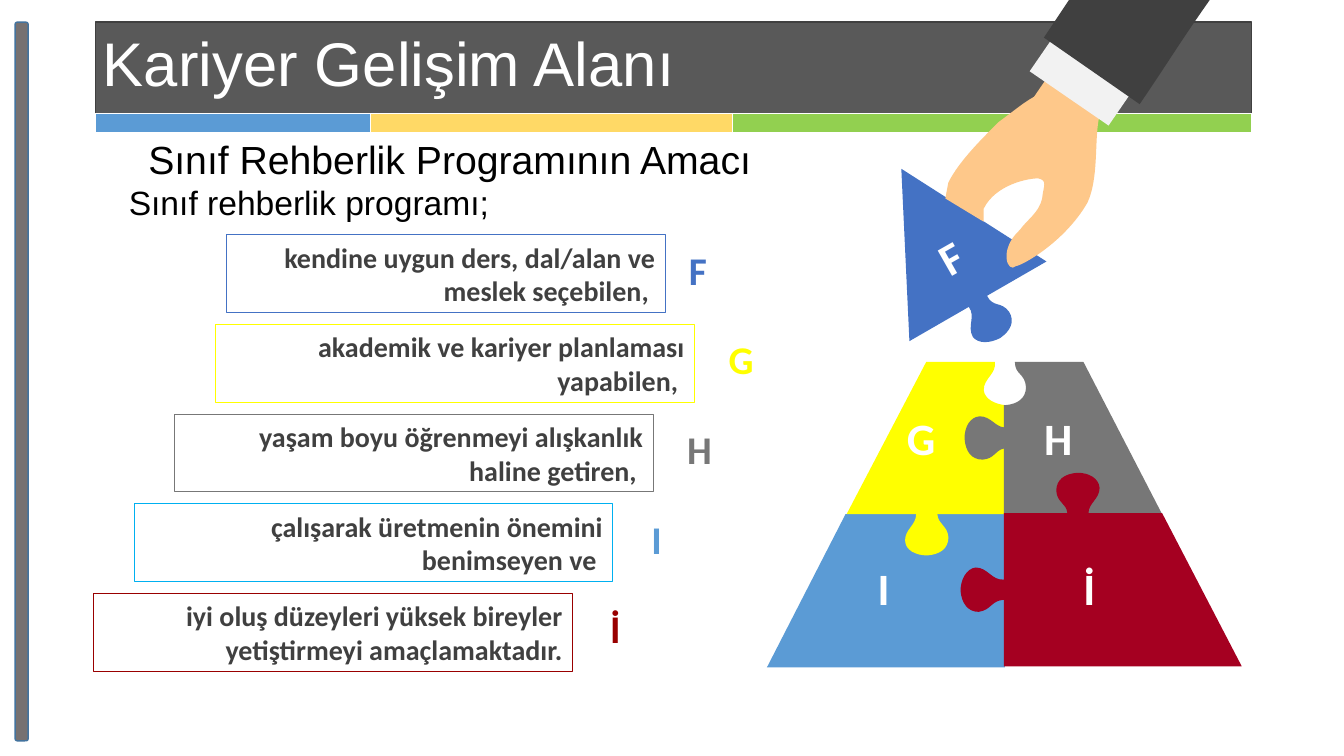
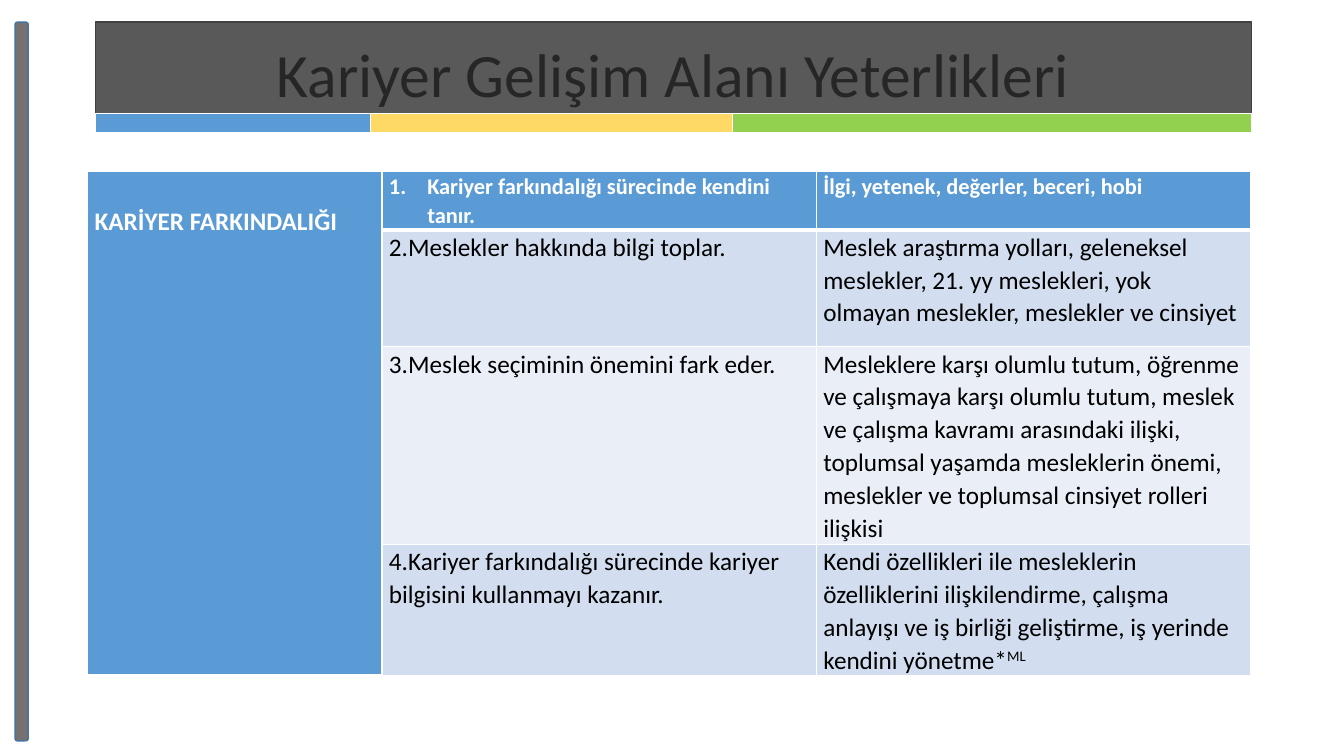
import dataclasses
import math
import typing

import lxml.etree
import pptx
import pptx.dml.color
import pptx.enum.shapes
import pptx.enum.text
import pptx.oxml.ns
import pptx.util

Align = pptx.enum.text.PP_ALIGN
Anchor = pptx.enum.text.MSO_ANCHOR
Preset = pptx.enum.shapes.MSO_SHAPE
Box = tuple[float, float, float, float]

WHITE, BLACK, DARK = "FFFFFF", "000000", "404040"
BLUE, YELLOW, GREY, SKY = "4472C4", "FFFF00", "777777", "5B9BD5"
RED, CRIMSON = "990000", "A50021"
STRIPES = [(2.73, SKY), (3.59, "FFD966"), (5.15, "92D050")]


@dataclasses.dataclass(frozen=True)
class Statement:
    letter: str
    text: str
    color: str
    border: str
    left: float
    width: float
    letter_left: float


@dataclasses.dataclass(frozen=True)
class Piece:
    """An outline as it shows: pairs are line ends, sextuples are cubic Bézier curves."""
    color: str
    outline: list[tuple[float, ...]]
    rotation: float = 0
    pivot: tuple[float, float] = (0, 0)


@dataclasses.dataclass(frozen=True)
class PieceLetter:
    letter: str
    box: Box
    rotation: float = 0


@dataclasses.dataclass(frozen=True)
class Competence:
    skill: str
    content: str
    fill: str
    height: float
    superscript: str = ""


STATEMENTS = [
    Statement("F", "kendine uygun ders, dal/alan ve meslek seçebilen, ", BLUE, BLUE, 2.25, 4.35, 6.72),
    Statement("G", "akademik ve kariyer planlaması yapabilen, ", YELLOW, YELLOW, 2.14, 4.75, 7.13),
    Statement("H", "yaşam boyu öğrenmeyi alışkanlık haline getiren, ", GREY, GREY, 1.73, 4.75, 6.72),
    Statement("I", "çalışarak üretmenin önemini benimseyen ve ", SKY, "00B0F0", 1.33, 4.75, 6.31),
    Statement("İ", "iyi oluş düzeyleri yüksek bireyler yetiştirmeyi amaçlamaktadır.", RED, RED, 0.93, 4.75, 5.9),
]

PUZZLE = [
    Piece(SKY, [(8.39, 5.1), (9.97, 5.1), (9.97, 6.62), (7.61, 6.62)]),
    Piece(BLUE, [
        (8.94, 1.67), (10.38, 2.59), (9.79, 2.93),
        (9.85, 3.05, 9.93, 2.98, 10.01, 3.09), (10.07, 3.19, 10.02, 3.28, 9.92, 3.35),
        (9.82, 3.4, 9.71, 3.41, 9.65, 3.34), (9.59, 3.23, 9.68, 3.14, 9.61, 3.04),
        (9.02, 3.38)], 330, (9.42, 2.52)),
    Piece(YELLOW, [
        (9.19, 3.59), (9.87, 3.59), (9.89, 3.71, 9.76, 3.75, 9.76, 3.87),
        (9.77, 3.96, 9.87, 4.01, 9.98, 4.02), (9.98, 5.1), (9.3, 5.1),
        (9.31, 5.21, 9.4, 5.21, 9.41, 5.33), (9.41, 5.44, 9.33, 5.5, 9.2, 5.51),
        (9.09, 5.51, 8.98, 5.46, 8.98, 5.36), (8.98, 5.25, 9.09, 5.21, 9.09, 5.1),
        (8.4, 5.1)]),
    Piece(GREY, [
        (10.07, 3.59), (10.75, 3.59), (11.53, 5.1), (9.96, 5.1), (9.96, 4.45),
        (9.87, 4.47, 9.87, 4.55, 9.75, 4.56), (9.64, 4.56, 9.58, 4.48, 9.57, 4.35),
        (9.57, 4.24, 9.62, 4.14, 9.72, 4.13), (9.83, 4.13, 9.87, 4.23, 9.96, 4.24),
        (9.96, 4.02), (9.97, 4.02), (10.1, 4.01, 10.18, 3.95, 10.18, 3.84),
        (10.17, 3.7, 10.07, 3.72, 10.07, 3.59)]),
    Piece(CRIMSON, [
        (10.69, 4.69), (10.8, 4.69, 10.9, 4.74, 10.91, 4.84),
        (10.91, 4.95, 10.8, 4.99, 10.8, 5.09), (11.53, 5.09), (12.32, 6.61),
        (9.96, 6.61), (9.96, 5.95), (9.83, 5.96, 9.84, 6.05, 9.71, 6.07),
        (9.6, 6.07, 9.54, 5.98, 9.53, 5.86), (9.53, 5.75, 9.59, 5.64, 9.68, 5.63),
        (9.8, 5.63, 9.84, 5.76, 9.96, 5.75), (9.96, 5.09), (10.59, 5.09),
        (10.58, 4.99, 10.49, 4.99, 10.48, 4.87), (10.48, 4.76, 10.56, 4.7, 10.69, 4.69)]),
]

PIECE_LETTERS = [
    PieceLetter("F", (9.23, 2.23, 0.41, 0.64), 330.4),
    PieceLetter("G", (8.9, 4.03, 0.49, 0.64)),
    PieceLetter("H", (10.26, 4.03, 0.49, 0.64)),
    PieceLetter("I", (8.61, 5.51, 0.32, 0.64)),
    PieceLetter("İ", (10.65, 5.51, 0.32, 0.64)),
]

HAND = Piece("FEC88A", [
    (10.61, 0.45), (11.29, 0.7), (11.07, 0.91, 10.96, 0.97, 10.9, 1.19),
    (10.86, 1.42, 10.9, 1.77, 10.79, 2.01), (10.56, 2.41, 10.13, 2.64, 10.08, 2.64),
    (10, 2.72, 9.9, 2.48, 10.12, 2.28), (10.19, 2.18, 10.31, 2.11, 10.34, 1.97),
    (10.35, 1.85, 10.4, 1.79, 10.3, 1.77), (10.2, 1.77, 9.88, 1.83, 9.76, 2.07),
    (9.76, 2.11, 9.76, 2.16, 9.76, 2.2), (9.38, 1.97),
    (9.39, 1.91, 9.4, 1.86, 9.41, 1.81), (9.52, 1.59, 9.77, 1.35, 9.91, 1.21),
    (10.1, 1.07, 10.14, 1.03, 10.26, 0.96)])
SLEEVE = Piece(DARK, [
    (10.62, -0.02), (12.01, -0.01), (11.7, 0.43, 11.61, 0.59, 11.31, 1.03),
    (10.36, 0.37)], 34.5, (11.19, 0.19))

COMPETENCES = [
    Competence("Kariyer farkındalığı sürecinde kendini tanır.",
               "İlgi, yetenek, değerler, beceri, hobi", SKY, 0.58),
    Competence("2.Meslekler hakkında bilgi toplar.",
               "Meslek araştırma yolları, geleneksel meslekler, 21. yy meslekleri, "
               "yok olmayan meslekler, meslekler ve cinsiyet", "D2DEEF", 1.16),
    Competence("3.Meslek seçiminin önemini fark eder.",
               "Mesleklere karşı olumlu tutum, öğrenme ve çalışmaya karşı olumlu tutum, "
               "meslek ve çalışma kavramı arasındaki ilişki, toplumsal yaşamda mesleklerin "
               "önemi, meslekler ve toplumsal cinsiyet rolleri ilişkisi", "EAEFF7", 1.74),
    Competence("4.Kariyer farkındalığı sürecinde kariyer bilgisini kullanmayı kazanır.",
               "Kendi özellikleri ile mesleklerin özelliklerini ilişkilendirme, çalışma "
               "anlayışı ve iş birliği geliştirme, iş yerinde kendini yönetme*",
               "D2DEEF", 1.16, "ML"),
]


def length(inches: float) -> pptx.util.Length:
    return pptx.util.Cm(inches * 2.54)


def place(box: Box) -> list[pptx.util.Length]:
    return [length(value) for value in box]


def rgb(color: str) -> pptx.dml.color.RGBColor:
    return pptx.dml.color.RGBColor.from_string(color)


def child(parent: typing.Any, tag: str, **attributes: str) -> typing.Any:
    element = lxml.etree.SubElement(parent, pptx.oxml.ns.qn(tag))
    for key, value in attributes.items():
        element.set(key, value)
    return element


def write(frame: typing.Any, text: str, *, size: float, color: str, font: str = "Calibri",
          bold: bool = False, align: Align = Align.LEFT, spacing: float = 1.0,
          superscript: str = "", number_indent: float = 0) -> None:
    """Fill the frame's first paragraph, or add one when it already has text."""
    paragraph = frame.add_paragraph() if frame.text else frame.paragraphs[0]
    paragraph.alignment = align
    paragraph.line_spacing = spacing
    paragraph.space_before = pptx.util.Pt(0)
    if number_indent:
        properties = paragraph._p.get_or_add_pPr()
        properties.set("marL", str(length(number_indent)))
        properties.set("indent", str(-length(number_indent)))
        child(properties, "a:buAutoNum", type="arabicPeriod")
    for part in filter(None, (text, superscript)):
        run = paragraph.add_run()
        run.text = part
        run.font.name = font
        run.font.size = pptx.util.Pt(size)
        run.font.bold = bold
        run.font.color.rgb = rgb(color)
        if part == superscript:
            run.font._element.set("baseline", "30000")


def paint(shape: typing.Any, fill: str = "", line: str = "", width: float = 1) -> None:
    shape.shadow.inherit = False
    if fill:
        shape.fill.solid()
        shape.fill.fore_color.rgb = rgb(fill)
    else:
        shape.fill.background()
    if line:
        shape.line.color.rgb = rgb(line)
        shape.line.width = pptx.util.Pt(width)
    else:
        shape.line.fill.background()


def add_preset(slide: typing.Any, preset: Preset, box: Box, **style: typing.Any) -> typing.Any:
    shape = slide.shapes.add_shape(preset, *place(box))
    paint(shape, **style)
    return shape


def add_label(slide: typing.Any, box: Box, text: str, wrap: bool = True,
              **style: typing.Any) -> typing.Any:
    label = slide.shapes.add_textbox(*place(box))
    label.text_frame.word_wrap = wrap
    write(label.text_frame, text, **style)
    return label


def add_piece(slide: typing.Any, piece: Piece) -> None:
    """Draw every point as a line end, then join each curve's three points into one curve."""
    turn = math.radians(-piece.rotation)
    px, py = piece.pivot
    points = []
    for segment in piece.outline:
        for x, y in zip(segment[::2], segment[1::2]):
            dx, dy = x - px, y - py
            points.append((length(px + dx * math.cos(turn) - dy * math.sin(turn)),
                           length(py + dx * math.sin(turn) + dy * math.cos(turn))))
    builder = slide.shapes.build_freeform(*points[0], scale=1.0)
    builder.add_line_segments(points[1:], close=True)
    shape = builder.convert_to_shape()
    ends = iter(list(shape.element.iter(pptx.oxml.ns.qn("a:lnTo"))))
    for segment in piece.outline[1:]:
        end = next(ends)
        if len(segment) == 6:
            end.tag = pptx.oxml.ns.qn("a:cubicBezTo")
            for other in (next(ends), next(ends)):
                end.append(other[0])
                other.getparent().remove(other)
    shape.rotation = piece.rotation
    paint(shape, fill=piece.color)


def add_grid(slide: typing.Any, left: float, top: float, widths: list[float],
             heights: list[float]) -> typing.Any:
    box = (left, top, sum(widths), sum(heights))
    table = slide.shapes.add_table(len(heights), len(widths), *place(box)).table
    table.first_row = table.horz_banding = False
    for column, width in zip(table.columns, widths):
        column.width = length(width)
    for row, height in zip(table.rows, heights):
        row.height = length(height)
    return table


def style_cell(cell: typing.Any, fill: str, bottom: float = 1) -> None:
    """Set white borders, the fill and narrow margins."""
    cell.margin_left = cell.margin_right = length(0.07)
    cell.margin_top = cell.margin_bottom = 0
    properties = cell._tc.get_or_add_tcPr()
    for side, width in (("L", 1), ("R", 1), ("T", 1), ("B", bottom)):
        border = child(properties, f"a:ln{side}", w=str(pptx.util.Pt(width)))
        child(child(border, "a:solidFill"), "a:srgbClr", val=WHITE)
    cell.fill.solid()
    cell.fill.fore_color.rgb = rgb(fill)


def add_framed_slide(deck: typing.Any, title: str, box: Box, anchor: Anchor,
                     **style: typing.Any) -> typing.Any:
    """Add a slide with the title band, the coloured stripes and the side bar."""
    slide = deck.slides.add_slide(deck.slide_layouts.get_by_name("Title Only"))
    add_preset(slide, Preset.RECTANGLE, (0.95, 0.22, 11.47, 0.94), fill="595959", line=DARK)
    stripes = add_grid(slide, 0.95, 1.13, [width for width, _ in STRIPES], [0.2])
    for cell, (_, color) in zip(stripes.rows[0].cells, STRIPES):
        style_cell(cell, color, bottom=3)
        child(cell.text_frame.paragraphs[0]._p, "a:endParaRPr", sz="400")
    add_preset(slide, Preset.ROUNDED_RECTANGLE, (0.15, 0.22, 0.13, 7.13),
               fill="767171", line="43739E")
    heading = slide.shapes.title
    heading.left, heading.top, heading.width, heading.height = place(box)
    heading.text_frame.auto_size = pptx.enum.text.MSO_AUTO_SIZE.NONE
    heading.text_frame.vertical_anchor = anchor
    write(heading.text_frame, title, size=44, spacing=0.9, **style)
    slide.shapes._spTree.append(heading.element)
    return slide


def build_purpose(deck: typing.Any) -> None:
    slide = add_framed_slide(deck, "Kariyer Gelişim Alanı", (0.92, 0.28, 11.5, 0.95),
                             Anchor.TOP, font="Arial", color=WHITE)
    for index, item in enumerate(STATEMENTS):
        offset = 0.89 * index
        add_label(slide, (item.letter_left, 2.39 + offset, 0.41, 0.57), item.letter,
                  size=28, color=item.color, bold=True, align=Align.CENTER)
        statement = add_preset(slide, Preset.RECTANGLE,
                               (item.left, 2.33 + offset, item.width, 0.77),
                               line=item.border, width=0.75)
        write(statement.text_frame, item.text, size=20, color=DARK, bold=True,
              align=Align.RIGHT)
    for piece in PUZZLE:
        add_piece(slide, piece)
    for mark in PIECE_LETTERS:
        label = add_label(slide, mark.box, mark.letter, wrap=False, size=32,
                          color=WHITE, bold=True)
        label.rotation = mark.rotation
    add_piece(slide, HAND)
    cuff = add_preset(slide, Preset.RECTANGLE, (10.24, 0.63, 0.95, 0.38), fill="F2F2F2")
    cuff.rotation = 34.5
    add_piece(slide, SLEEVE)
    purpose = add_label(slide, (1.18, 1.29, 6.67, 0.98), "Sınıf Rehberlik Programının Amacı ",
                        size=28, color=BLACK, font="Arial", align=Align.CENTER)
    write(purpose.text_frame, "Sınıf rehberlik programı;", size=24, color=BLACK, font="Arial")


def build_competences(deck: typing.Any) -> None:
    slide = add_framed_slide(deck, "Kariyer Gelişim Alanı Yeterlikleri",
                             (0.35, 0.37, 12.66, 0.79), Anchor.MIDDLE,
                             color="262626", align=Align.CENTER)
    table = add_grid(slide, 0.87, 1.7, [2.92, 4.31, 4.31],
                     [item.height for item in COMPETENCES])
    for index, item in enumerate(COMPETENCES):
        header = index == 0
        area, skill, content = table.rows[index].cells
        style_cell(area, SKY, bottom=3)
        for cell in (skill, content):
            style_cell(cell, item.fill, bottom=3 if header else 1)
        style = dict(size=16 if header else 18, color=WHITE if header else BLACK,
                     bold=header, spacing=1.07)
        write(skill.text_frame, item.skill, number_indent=0.38 if header else 0, **style)
        write(content.text_frame, item.content, superscript=item.superscript, **style)
    area = table.cell(0, 0)
    area.merge(table.cell(len(COMPETENCES) - 1, 0))
    area.margin_top = length(0.33)
    write(area.text_frame, "KARİYER FARKINDALIĞI", size=18, color=WHITE, bold=True, spacing=1.07)


def main() -> None:
    deck = pptx.Presentation()
    deck.slide_width, deck.slide_height = pptx.util.Cm(33.87), pptx.util.Cm(19.05)
    build_purpose(deck)
    build_competences(deck)
    deck.save("out.pptx")


if __name__ == "__main__":
    main()
